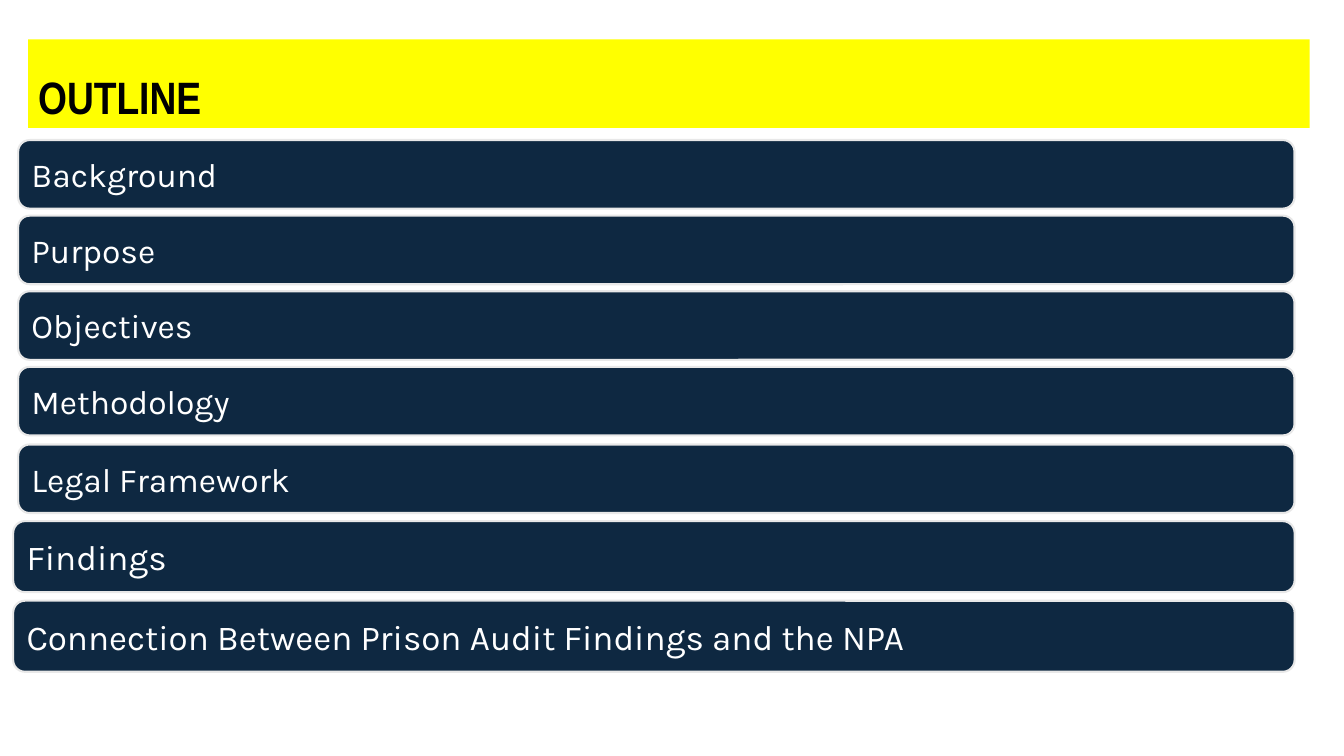
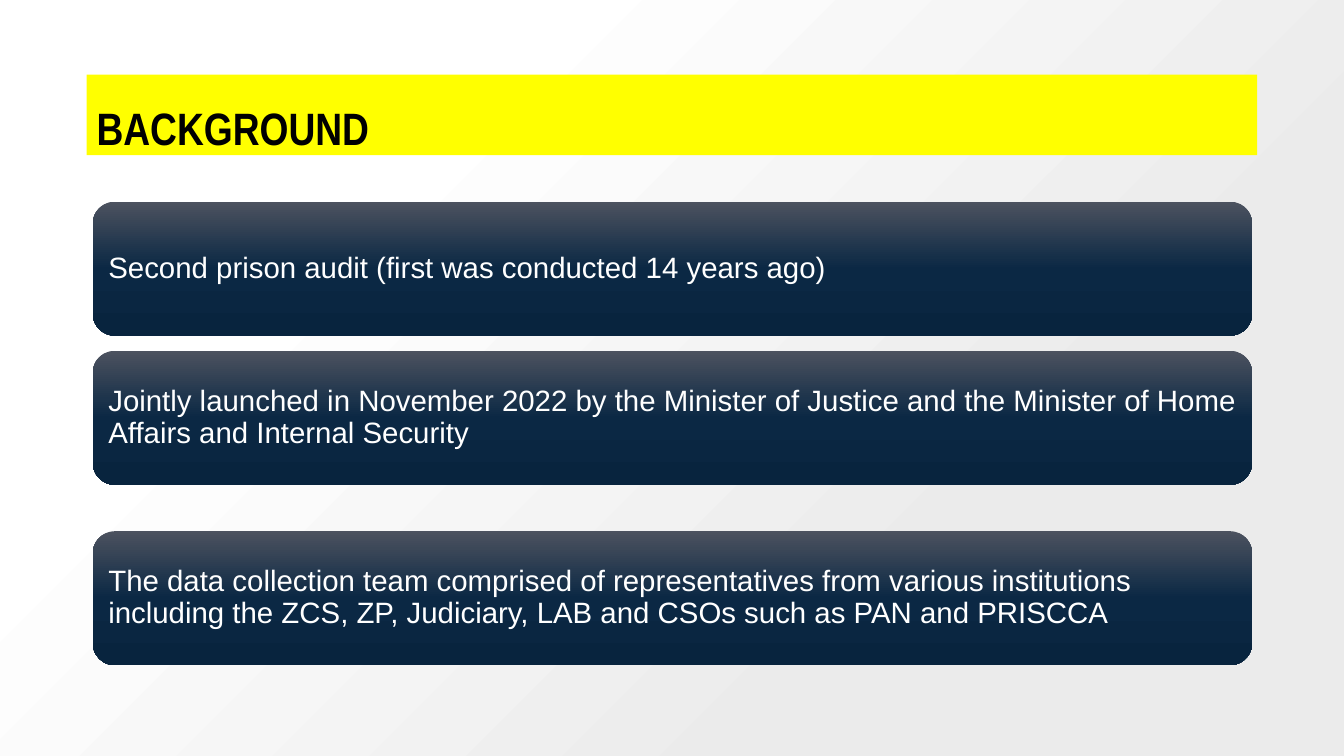
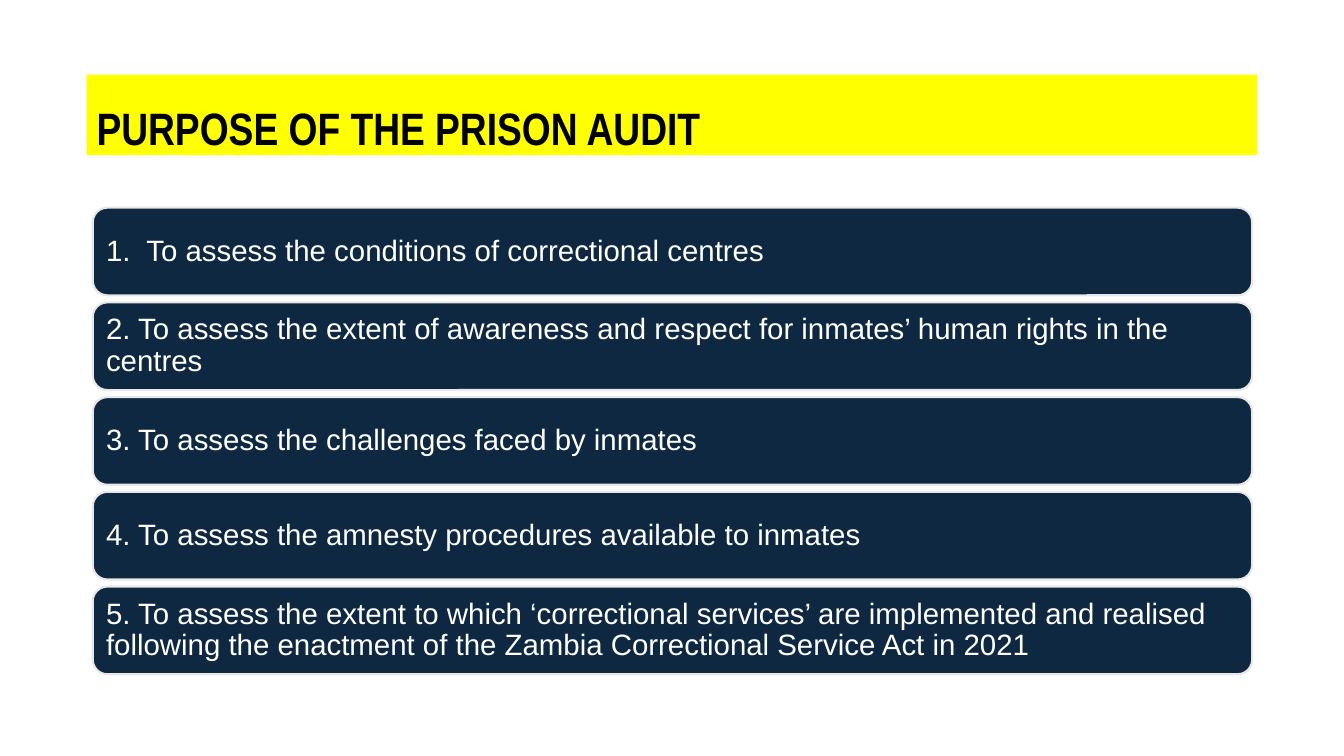
from copy import deepcopy
from dataclasses import dataclass

from pptx import Presentation
from pptx.dml.color import RGBColor
from pptx.enum.shapes import MSO_SHAPE
from pptx.enum.text import MSO_ANCHOR, PP_ALIGN
from pptx.oxml.ns import qn
from pptx.util import Inches, Pt

RECTANGLE = MSO_SHAPE.RECTANGLE
ROUNDED = MSO_SHAPE.ROUNDED_RECTANGLE
LEFT = PP_ALIGN.LEFT
MIDDLE, BOTTOM = MSO_ANCHOR.MIDDLE, MSO_ANCHOR.BOTTOM

# Grid: 100 columns by 100 rows over the whole slide
SLIDE_WIDTH, SLIDE_HEIGHT = Inches(13.33), Inches(7.5)
COLUMN, ROW = SLIDE_WIDTH / 100, SLIDE_HEIGHT / 100


@dataclass(frozen=True)
class Theme:
    band: str = "FFFF00"
    title_text: str = "000000"
    bar: str = "0E2841"
    bar_line: str = "E8E8E8"
    bar_text: str = "FFFFFF"
    bar_gradient: tuple = ((0, "4C525F"), (0.5, "0B2844"), (1, "08243E"))
    page_gradient: tuple = ((0.26, "FFFFFF"), (0.72, "EBEBEB"))
    title_font: str = "Arial Narrow"
    title_size: float = 32.4
    line_width: float = 1.5


@dataclass(frozen=True)
class Box:
    """A region in grid columns and rows."""
    left: float
    top: float
    width: float
    height: float


@dataclass(frozen=True)
class BarStyle:
    font: str = "Arial"
    size: float = 21
    inset: float = 0.09
    line_spacing: float = 0.9
    gap: float = 0.93
    glossy: bool = False


THEME = Theme()
TITLE_BOX = Box(6.45, 9.87, 87.1, 10.67)
OUTLINE_STYLE = BarStyle("Karla", 24, 0.1, 1.0)
OUTLINE_LARGE_STYLE = BarStyle("Karla", 25, 0.1, 1.0, 1.13)
BACKGROUND_STYLE = BarStyle(gap=2, glossy=True)
PURPOSE_STYLE = BarStyle()


def color(value):
    return RGBColor.from_string(value)


def set_gradient(fill, element, stops, angle):
    """Give a fill any number of stops; element is the XML that holds it."""
    fill.gradient()
    fill.gradient_angle = angle
    stop_list = element.find(".//" + qn("a:gsLst"))
    while len(stop_list) < len(stops):
        stop_list.append(deepcopy(stop_list[-1]))
    for stop, (position, value) in zip(fill.gradient_stops, stops):
        stop.position = position
        stop.color.rgb = color(value)


def add_panel(slide, kind, box, text, anchor, line_spacing):
    """Add a plain shape with one left-aligned paragraph."""
    shape = slide.shapes.add_shape(
        kind, round(box.left * COLUMN), round(box.top * ROW),
        round(box.width * COLUMN), round(box.height * ROW))
    shape.shadow.inherit = False
    shape.line.fill.background()
    frame = shape.text_frame
    frame.word_wrap = True
    frame.vertical_anchor = anchor
    paragraph = frame.paragraphs[0]
    paragraph.text = text
    paragraph.alignment = LEFT
    paragraph.line_spacing = line_spacing
    return shape, paragraph.font


def style_font(font, name, size, value, bold=False):
    font.name = name
    font.size = Pt(size)
    font.bold = bold
    font.color.rgb = color(value)


def add_title(slide, text, box=TITLE_BOX, bottom_inset=0):
    shape, font = add_panel(slide, RECTANGLE, box, text, BOTTOM, 0.9)
    shape.fill.solid()
    shape.fill.fore_color.rgb = color(THEME.band)
    shape.text_frame.margin_bottom = Inches(bottom_inset)
    style_font(font, THEME.title_font, THEME.title_size, THEME.title_text, True)


def add_bar(slide, box, text, style):
    shape, font = add_panel(slide, ROUNDED, box, text, MIDDLE, style.line_spacing)
    if style.glossy:
        set_gradient(shape.fill, shape.element, THEME.bar_gradient, 270)
    else:
        shape.fill.solid()
        shape.fill.fore_color.rgb = color(THEME.bar)
        shape.line.color.rgb = color(THEME.bar_line)
        shape.line.width = Pt(THEME.line_width)
    frame = shape.text_frame
    frame.margin_left = frame.margin_right = Inches(style.inset)
    frame.margin_top = frame.margin_bottom = Inches(style.inset)
    style_font(font, style.font, style.size, THEME.bar_text)


def add_bar_stack(slide, box, texts, style):
    """Share the height of a box equally between bars."""
    height = (box.height - style.gap * (len(texts) - 1)) / len(texts)
    for index, text in enumerate(texts):
        top = box.top + index * (height + style.gap)
        add_bar(slide, Box(box.left, top, box.width, height), text, style)


def build_outline(slide):
    add_bar_stack(slide, Box(1.35, 18.53, 94.97, 39.07),
                  ["Background", "Purpose", "Objectives", "Methodology"],
                  OUTLINE_STYLE)
    add_bar_stack(slide, Box(1.35, 58.8, 94.97, 9.07),
                  ["Legal Framework"], OUTLINE_STYLE)
    add_bar_stack(slide, Box(0.98, 68.93, 95.35, 19.93),
                  ["Findings",
                   "Connection Between Prison Audit Findings and the NPA"],
                  OUTLINE_LARGE_STYLE)
    add_title(slide, "OUTLINE", Box(2.1, 5.2, 95.35, 11.73), 0.04)


def build_background(slide):
    set_gradient(slide.background.fill, slide.element, THEME.page_gradient, 315)
    add_bar_stack(slide, Box(6.9, 26.67, 86.27, 37.46), [
        "Second prison audit (first was conducted 14 years ago)",
        "Jointly launched in November 2022 by the Minister of Justice and the "
        "Minister of Home Affairs and Internal Security",
    ], BACKGROUND_STYLE)
    add_bar_stack(slide, Box(6.9, 70.27, 86.27, 17.73), [
        "The data collection team comprised of representatives from various "
        "institutions including the ZCS, ZP, Judiciary, LAB and CSOs such as "
        "PAN and PRISCCA",
    ], BACKGROUND_STYLE)
    add_title(slide, "BACKGROUND")


def build_purpose(slide):
    add_bar_stack(slide, Box(6.9, 27.47, 86.27, 61.72), [
        "1.  To assess the conditions of correctional centres",
        "2. To assess the extent of awareness and respect for inmates’ human "
        "rights in the centres",
        "3. To assess the challenges faced by inmates",
        "4. To assess the amnesty procedures available to inmates",
        "5. To assess the extent to which ‘correctional services’ are "
        "implemented and realised following the enactment of the Zambia "
        "Correctional Service Act in 2021",
    ], PURPOSE_STYLE)
    add_title(slide, "PURPOSE OF THE PRISON AUDIT")


def main():
    presentation = Presentation()
    presentation.slide_width = SLIDE_WIDTH
    presentation.slide_height = SLIDE_HEIGHT
    blank = presentation.slide_layouts[6]
    for build in (build_outline, build_background, build_purpose):
        build(presentation.slides.add_slide(blank))
    presentation.save("out.pptx")


if __name__ == "__main__":
    main()
